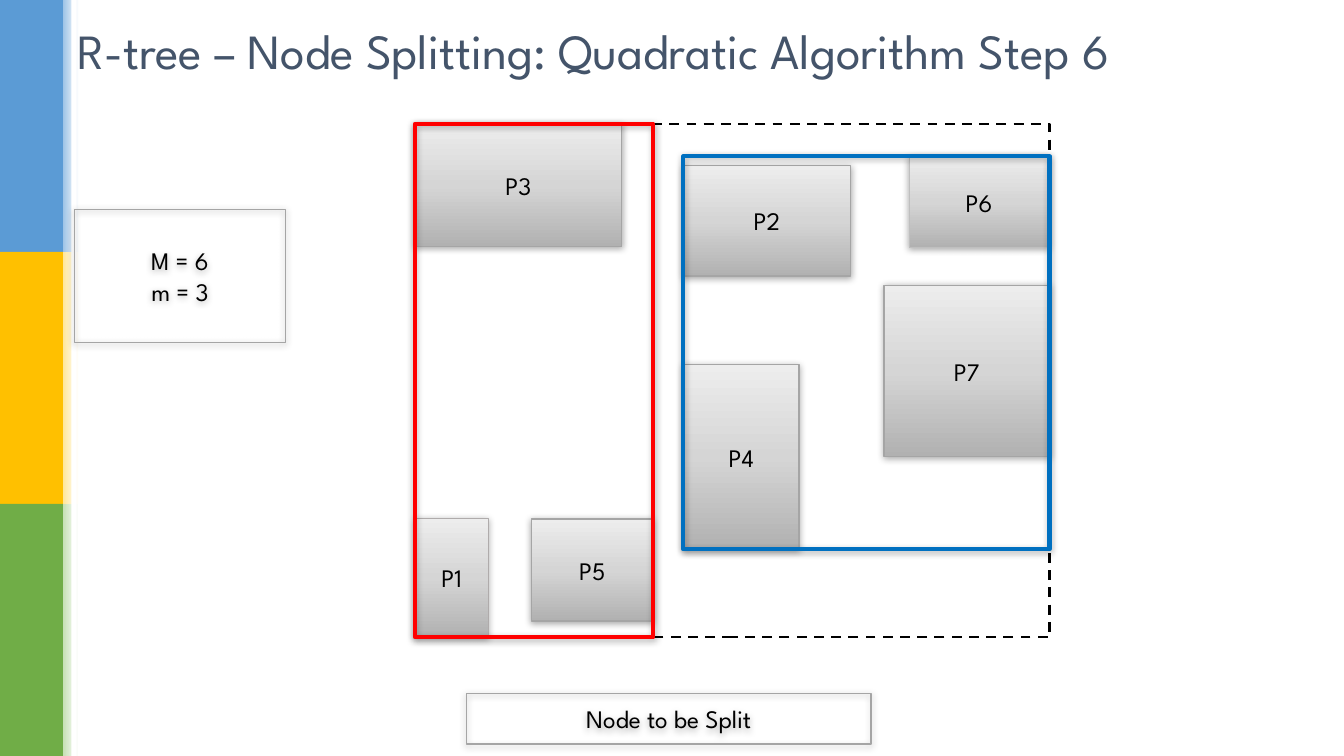
"""Build the R-tree quadratic split slide, step 6."""
from copy import deepcopy

from lxml.etree import SubElement
from pptx import Presentation
from pptx.dml.color import RGBColor
from pptx.enum.dml import MSO_LINE
from pptx.enum.shapes import MSO_SHAPE
from pptx.enum.text import MSO_ANCHOR, PP_ALIGN
from pptx.oxml.ns import qn
from pptx.util import Cm, Pt

TITLE = "R-tree – Node Splitting: Quadratic Algorithm Step 6"
FONT = "League Spartan"
C = {
    "title": "44546A", "text": "000000", "white": "FFFFFF",
    "edge": "A5A5A5", "edge_p1": "AFABAB", "edge_p6": "BFBFBF",
    "dark": "B1B1B1", "mid": "D5D5D5", "light": "EDEDED",
    "red": "FF0000", "blue": "0070C0",
}
BANDS = [("5B9BD5", "9DC3E6"), ("FFC000", "FFE699"), ("70AD47", "C5E0B4")]
BAND_W, FADE_W, BAND_H = 1.59, 0.4, 6.35

ENTRIES = {
    "P2": (17.22, 4.17, 4.22, 2.79),
    "P1": (10.46, 13.06, 1.85, 3.0),
    "P3": (10.46, 3.12, 5.21, 3.1),
    "P7": (22.28, 7.19, 4.17, 4.32),
    "P5": (13.39, 13.08, 3.07, 2.57),
    "P4": (17.22, 9.19, 2.92, 4.65),
    "P6": (22.91, 3.94, 3.53, 2.31),
}
EDGES = {"P1": ("edge_p1", 0.75), "P6": ("edge_p6", 0.75)}
GROUPS = [("red", ("P1", "P3", "P5")), ("blue", ("P2", "P4", "P6", "P7"))]
CAPTION = (["Node to be Split"], (11.76, 17.48, 10.19, 1.27))
LIMITS = (["M = 6", "m = 3"], (1.88, 5.28, 5.31, 3.35))


def bounds(names):
    boxes = [ENTRIES[n] for n in names]
    x, y = min(b[0] for b in boxes), min(b[1] for b in boxes)
    return (x, y, max(b[0] + b[2] for b in boxes) - x,
            max(b[1] + b[3] for b in boxes) - y)


def set_gradient(sp, colors, angle):
    sp.fill.gradient()
    sp.fill.gradient_angle = angle
    gs_lst = sp._element.spPr.find(".//" + qn("a:gsLst"))
    for _ in colors[2:]:
        gs_lst.append(deepcopy(gs_lst[0]))
    for i, (stop, color) in enumerate(zip(sp.fill.gradient_stops, colors)):
        stop.color.rgb = RGBColor.from_string(color)
        stop.position = i / (len(colors) - 1)


def add_shadow(sp):
    effects = sp._element.spPr.find(qn("a:effectLst"))
    shadow = SubElement(effects, qn("a:outerShdw"), blurRad=str(Pt(5)),
                        dist=str(Pt(1)), dir="5400000", rotWithShape="0")
    color = SubElement(shadow, qn("a:srgbClr"), val=C["text"])
    SubElement(color, qn("a:alpha"), val="32000")


def add_rect(s, box, fill=None, line=None, width=1, angle=90):
    sp = s.shapes.add_shape(MSO_SHAPE.RECTANGLE, *(Cm(v) for v in box))
    sp.shadow.inherit = False
    if isinstance(fill, tuple):
        set_gradient(sp, fill, angle)
    elif fill:
        sp.fill.solid()
        sp.fill.fore_color.rgb = RGBColor.from_string(fill)
    else:
        sp.fill.background()
    if line:
        sp.line.color.rgb = RGBColor.from_string(line)
        sp.line.width = Pt(width)
    else:
        sp.line.fill.background()
    return sp


def set_text(sp, lines, size=18, color="text", align=PP_ALIGN.CENTER):
    tf = sp.text_frame
    tf.word_wrap = True
    tf.vertical_anchor = MSO_ANCHOR.MIDDLE
    tf.text = "\n".join(lines)
    for p in tf.paragraphs:
        p.alignment = align
        p.font.name = FONT
        p.font.size = Pt(size)
        p.font.color.rgb = RGBColor.from_string(C[color])


def add_label(s, lines, box, fill=None, edge="edge", width=1):
    sp = add_rect(s, box, fill, C[edge], width)
    add_shadow(sp)
    set_text(sp, lines)


def main():
    prs = Presentation()
    prs.slide_width, prs.slide_height = Cm(33.87), Cm(19.05)
    s = prs.slides.add_slide(prs.slide_layouts[6])

    for i, (solid, fade) in enumerate(BANDS):
        add_rect(s, (0, i * BAND_H, BAND_W, BAND_H), solid)
        add_rect(s, (BAND_W, i * BAND_H, FADE_W, BAND_H),
                 (fade, C["white"]), angle=0)
    add_rect(s, (1.8, 0, 0.13, 3 * BAND_H), C["white"])

    title = s.shapes.add_textbox(Cm(1.7), Cm(0.41), Cm(31.01), Cm(1.68))
    set_text(title, [TITLE], 35.1, "title", PP_ALIGN.LEFT)

    node = add_rect(s, bounds(ENTRIES), line=C["text"], width=1.75)
    node.line.dash_style = MSO_LINE.DASH
    add_label(s, *CAPTION)
    for name, box in ENTRIES.items():
        edge, width = EDGES.get(name, ("edge", 1))
        add_label(s, [name], box, (C["dark"], C["mid"], C["light"]), edge, width)
    add_label(s, *LIMITS)
    for color, names in GROUPS:
        add_shadow(add_rect(s, bounds(names), line=C[color], width=3))

    prs.save("out.pptx")


if __name__ == "__main__":
    main()
